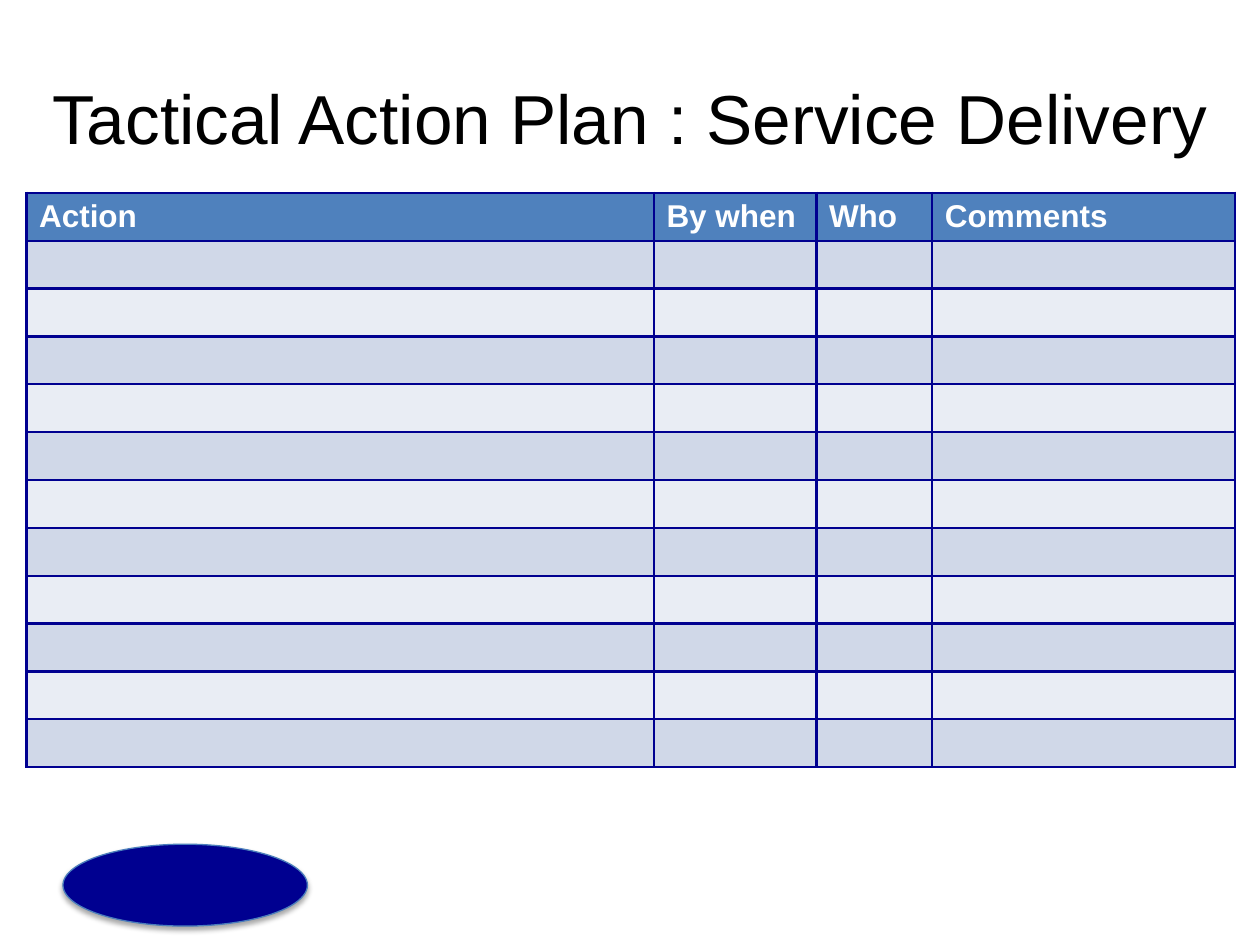
import dataclasses

import lxml.etree
import pptx
import pptx.dml.color
import pptx.enum.shapes
import pptx.enum.text
import pptx.oxml
import pptx.oxml.ns
import pptx.util
from pptx.util import Inches

qn = pptx.oxml.ns.qn
RGB = pptx.dml.color.RGBColor.from_string


@dataclasses.dataclass(frozen=True)
class Theme:
    font: str = "Arial"
    title_size: float = 39.6
    table_size: int = 18
    border_width: float = 1.5
    outline_width: float = 0.75
    black: str = "000000"
    white: str = "FFFFFF"
    navy: str = "000090"
    outline: str = "4B7EBC"
    header: str = "4F81BD"
    bands: tuple = ("D0D8E8", "E9EDF4")


theme = Theme()


def style_run(run, size, color, bold=False):
    run.font.name = theme.font
    run.font.size = pptx.util.Pt(size)
    run.font.bold = bold
    run.font.color.rgb = RGB(color)


def style_cell(cell, fill):
    """Set the margin, the four borders and the fill of a table cell."""
    cell.margin_bottom = Inches(0.01)
    properties = cell._tc.get_or_add_tcPr()
    for side in ("a:lnL", "a:lnR", "a:lnT", "a:lnB"):
        border = lxml.etree.SubElement(
            properties, qn(side), w=str(pptx.util.Pt(theme.border_width)))
        solid = lxml.etree.SubElement(border, qn("a:solidFill"))
        lxml.etree.SubElement(solid, qn("a:srgbClr"), val=theme.navy)
    cell.fill.solid()
    cell.fill.fore_color.rgb = RGB(fill)


deck = pptx.Presentation()
deck.slide_width, deck.slide_height = Inches(10), Inches(7.5)
slide = deck.slides.add_slide(deck.slide_layouts[6])
left, width = Inches(0.21), Inches(9.58)

# Badge at the foot of the slide
badge = slide.shapes.add_shape(
    pptx.enum.shapes.MSO_SHAPE.OVAL, Inches(0.5), Inches(6.7), Inches(1.94), Inches(0.65))
badge.fill.solid()
badge.fill.fore_color.rgb = RGB(theme.navy)
badge.line.color.rgb = RGB(theme.outline)
badge.line.width = pptx.util.Pt(theme.outline_width)
badge.shadow.inherit = False
effects = badge._element.spPr.find(qn("a:effectLst"))
shadow = lxml.etree.SubElement(
    effects, qn("a:outerShdw"), blurRad=str(pptx.util.Pt(3.1)),
    dist=str(pptx.util.Pt(1.8)), dir="5400000", rotWithShape="0")
shadow_color = lxml.etree.SubElement(shadow, qn("a:srgbClr"), val=theme.black)
lxml.etree.SubElement(shadow_color, qn("a:alpha"), val="35000")

# Title
title = slide.shapes.add_textbox(left, Inches(0.3), width, Inches(1.25)).text_frame
title.word_wrap = True
title.vertical_anchor = pptx.enum.text.MSO_ANCHOR.MIDDLE
title.text = "Tactical Action Plan : Service Delivery"
title.paragraphs[0].alignment = pptx.enum.text.PP_ALIGN.CENTER
style_run(title.paragraphs[0].runs[0], theme.title_size, theme.black)

# Action plan: a header and eleven rows to fill in
columns = {"Action": 4.98, "By when": 1.29, "Who": 0.92, "Comments": 2.4}
row_count, row_height = 12, 0.38
plan = slide.shapes.add_table(
    row_count, len(columns), left, Inches(1.53),
    width, Inches(row_count * row_height)).table

for column, (heading, column_width) in enumerate(columns.items()):
    plan.columns[column].width = Inches(column_width)
    header_cell = plan.cell(0, column)
    header_cell.text_frame.text = heading
    style_run(header_cell.text_frame.paragraphs[0].runs[0],
              theme.table_size, theme.white, bold=True)
    style_cell(header_cell, theme.header)

    for row in range(1, row_count):
        entry = plan.cell(row, column)
        style_cell(entry, theme.bands[(row - 1) % 2])
        # The type of an empty cell sets its row height
        empty_type = lxml.etree.SubElement(
            entry.text_frame.paragraphs[0]._p, qn("a:endParaRPr"),
            sz=str(theme.table_size * 100))
        lxml.etree.SubElement(empty_type, qn("a:latin"), typeface=theme.font)

deck.save("out.pptx")
